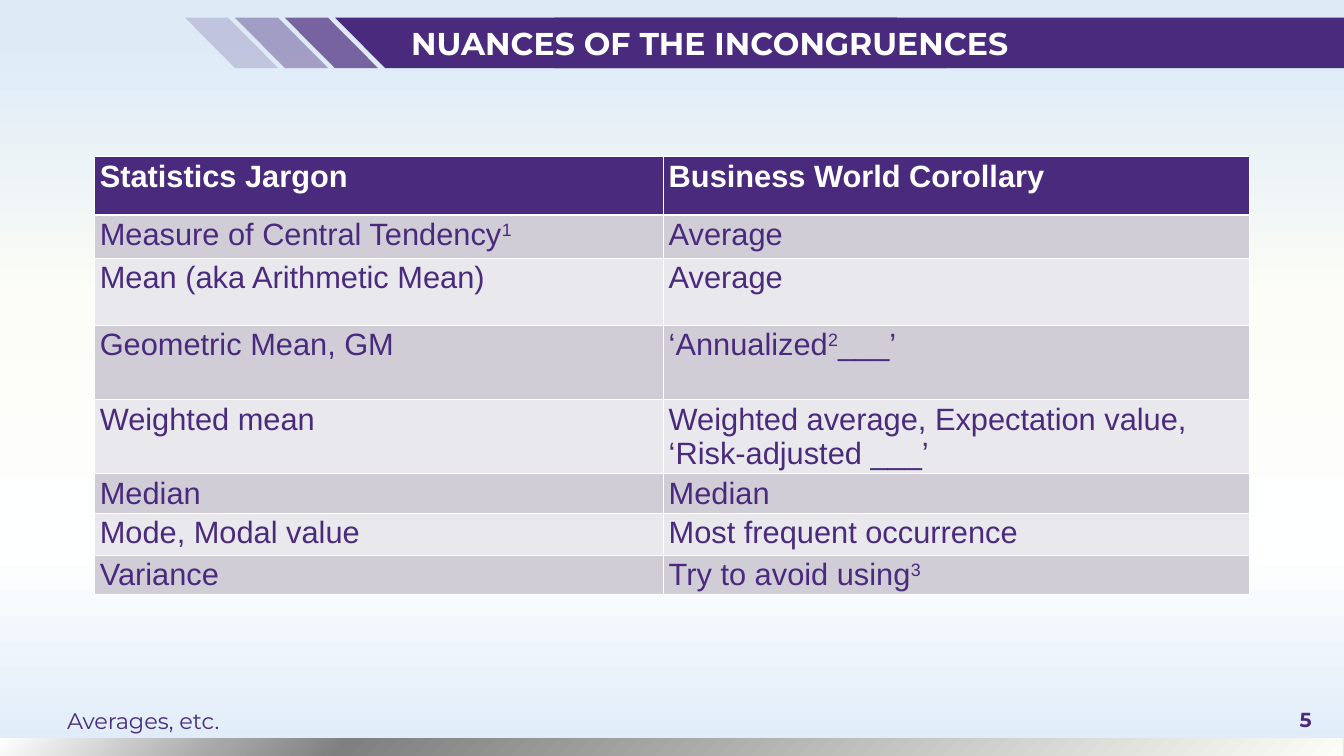
from dataclasses import dataclass

from lxml import etree
from pptx import Presentation
from pptx.dml.color import RGBColor
from pptx.enum.shapes import MSO_SHAPE
from pptx.enum.text import MSO_ANCHOR, MSO_AUTO_SIZE, PP_ALIGN
from pptx.oxml.ns import qn
from pptx.util import Inches, Pt

RECT, SLANT = MSO_SHAPE.RECTANGLE, MSO_SHAPE.PARALLELOGRAM
TOP, MIDDLE = MSO_ANCHOR.TOP, MSO_ANCHOR.MIDDLE
LEFT, RIGHT = PP_ALIGN.LEFT, PP_ALIGN.RIGHT


@dataclass(frozen=True)
class Theme:
    purple: str = "4A2A7C"
    white: str = "FFFFFF"
    bands: tuple = ("D0CDD7", "E9E8EC")
    sky: tuple = ((5, "DEEBF7"), (40, "FCFDF6"), (71, "FEFFFF"),
                  (73, "FEFFFF"), (100, "DEEBF7"))
    steel: tuple = ((0, "FCFDF6"), (74, "808080"), (83, "A6A6A6"), (100, "FFFFFF"))
    head: str = "Montserrat"
    body: str = "Arial"
    title: int = 45
    cell: int = 44
    foot: int = 32
    page: int = 29


@dataclass(frozen=True)
class Box:
    left: float
    top: float
    width: float
    height: float

    def emu(self) -> tuple:
        return tuple(Inches(v) for v in (self.left, self.top, self.width, self.height))


@dataclass(frozen=True)
class Style:
    size: int
    color: str
    font: str
    bold: bool = False


@dataclass(frozen=True)
class Bar:
    box: Box
    kind: int = SLANT
    alpha: int = 100


@dataclass(frozen=True)
class Row:
    height: float
    term: str
    match: str


THEME = Theme()
BARS = [Bar(Box(6.65, 0.35, 12.14, 1))]
BARS += [Bar(Box(5.65 - 0.99 * i, 0.35, 1.85, 1), alpha=a)
         for i, a in enumerate((70, 40, 20))]
BARS += [Bar(Box(11, 0.35, 15.67, 1), RECT)]

# A caret pair encloses superscript text.
ROWS = [
    Row(1.16, "Statistics Jargon", "Business World Corollary"),
    Row(0.86, "Measure of Central Tendency^1^", "Average"),
    Row(1.33, "Mean (aka Arithmetic Mean)", "Average"),
    Row(1.47, "Geometric Mean, GM", "‘Annualized^2^___’"),
    Row(1.47, "Weighted mean",
        "Weighted average, Expectation value, ‘Risk-adjusted ___’"),
    Row(0.78, "Median", "Median"),
    Row(0.83, "Mode, Modal value", "Most frequent occurrence"),
    Row(0.78, "Variance", "Try to avoid using^3^"),
]
COLS = (11.29, 11.63)


def rgb(color: str) -> RGBColor:
    return RGBColor.from_string(color)


def add(node, tag: str, **attrs):
    return etree.SubElement(node, qn(tag), {k: str(v) for k, v in attrs.items()})


def grade(fill, root, stops: tuple, radial: bool = False) -> None:
    """Fill with colour stops, downward or outward from the lower right corner."""
    fill.gradient()
    node = root.find(".//" + qn("a:gradFill"))
    for child in list(node):
        node.remove(child)
    group = add(node, "a:gsLst")
    for pos, color in stops:
        add(add(group, "a:gs", pos=pos * 1000), "a:srgbClr", val=color)
    if radial:
        way = add(node, "a:path", path="circle")
        add(way, "a:fillToRect", l=100000, t=100000)
    else:
        add(node, "a:lin", ang=5400000, scaled=0)


def add_shape(slide, kind: int, box: Box):
    shape = slide.shapes.add_shape(kind, *box.emu())
    shape.shadow.inherit = False
    shape.line.fill.background()
    return shape


def add_bar(slide, bar: Bar) -> None:
    shape = add_shape(slide, bar.kind, bar.box)
    shape.fill.solid()
    shape.fill.fore_color.rgb = rgb(THEME.purple)
    if bar.kind == SLANT:
        shape.adjustments[0] = 0.993
        shape.rotation = 180
        shape._element.spPr.find(qn("a:xfrm")).set("flipH", "1")
    if bar.alpha < 100:
        color = shape._element.spPr.find(".//" + qn("a:srgbClr"))
        add(color, "a:alpha", val=bar.alpha * 1000)


def style_font(font, style: Style) -> None:
    font.size, font.bold, font.name = Pt(style.size), style.bold, style.font
    font.color.rgb = rgb(style.color)


def set_text(shape, text: str, style: Style, anchor=MIDDLE, align=LEFT) -> None:
    frame = shape.text_frame
    frame.text = text
    frame.word_wrap = True
    frame.auto_size = MSO_AUTO_SIZE.NONE
    frame.vertical_anchor = anchor
    frame.margin_left = frame.margin_right = Inches(0.24)
    frame.margin_top = frame.margin_bottom = Inches(0.12)
    line = frame.paragraphs[0]
    line.alignment = align
    style_font(line.runs[0].font, style)


def add_note(slide, box: Box, text: str, style: Style, align=LEFT) -> None:
    set_text(slide.shapes.add_textbox(*box.emu()), text, style, align=align)


def set_edges(cell, row: int) -> None:
    """Draw white edges, thicker between the header and the body."""
    props = cell._tc.get_or_add_tcPr()
    thick = {"T": row == 1, "B": row == 0}
    for side in "LRTB":
        width = Pt(3 if thick.get(side) else 1)
        edge = add(props, "a:ln" + side, w=int(width))
        add(add(edge, "a:solidFill"), "a:srgbClr", val=THEME.white)


def fill_cell(cell, text: str, row: int) -> None:
    set_edges(cell, row)
    cell.fill.solid()
    cell.fill.fore_color.rgb = rgb(THEME.bands[(row - 1) % 2] if row else THEME.purple)
    style = Style(THEME.cell, THEME.purple if row else THEME.white, THEME.body, row == 0)
    line = cell.text_frame.paragraphs[0]
    for i, part in enumerate(text.split("^")):
        if part:
            run = line.add_run()
            run.text = part
            style_font(run.font, style)
            if i % 2:
                run.font._element.set("baseline", "30000")


def add_terms(slide) -> None:
    box = Box(1.88, 3.11, sum(COLS), sum(r.height for r in ROWS))
    table = slide.shapes.add_table(len(ROWS), len(COLS), *box.emu()).table
    for col, width in zip(table.columns, COLS):
        col.width = Inches(width)
    for i, row in enumerate(ROWS):
        table.rows[i].height = Inches(row.height)
        for j, text in enumerate((row.term, row.match)):
            fill_cell(table.cell(i, j), text, i)


def main() -> None:
    deck = Presentation()
    deck.slide_width, deck.slide_height = Inches(26.67), Inches(15)
    slide = deck.slides.add_slide(deck.slide_layouts[5])
    grade(slide.background.fill, slide._element, THEME.sky)
    base = add_shape(slide, RECT, Box(-0.03, 14.65, 26.67, 0.35))
    grade(base.fill, base._element, THEME.steel, radial=True)
    for bar in BARS:
        add_bar(slide, bar)

    title = slide.shapes.title
    slide.shapes._spTree.append(title._element)  # bring in front of the bars
    title.left, title.top, title.width, title.height = Box(7.92, 0.35, 17.92, 0.95).emu()
    set_text(title, "NUANCES OF THE INCONGRUENCES",
             Style(THEME.title, THEME.white, THEME.head, True), TOP)
    add_note(slide, Box(1.09, 13.9, 19.67, 0.8), "Averages, etc.",
             Style(THEME.foot, THEME.purple, THEME.head))
    add_note(slide, Box(21.13, 13.88, 5.14, 0.8), "5",
             Style(THEME.page, THEME.purple, THEME.head, True), RIGHT)
    add_terms(slide)
    deck.save("out.pptx")


if __name__ == "__main__":
    main()
